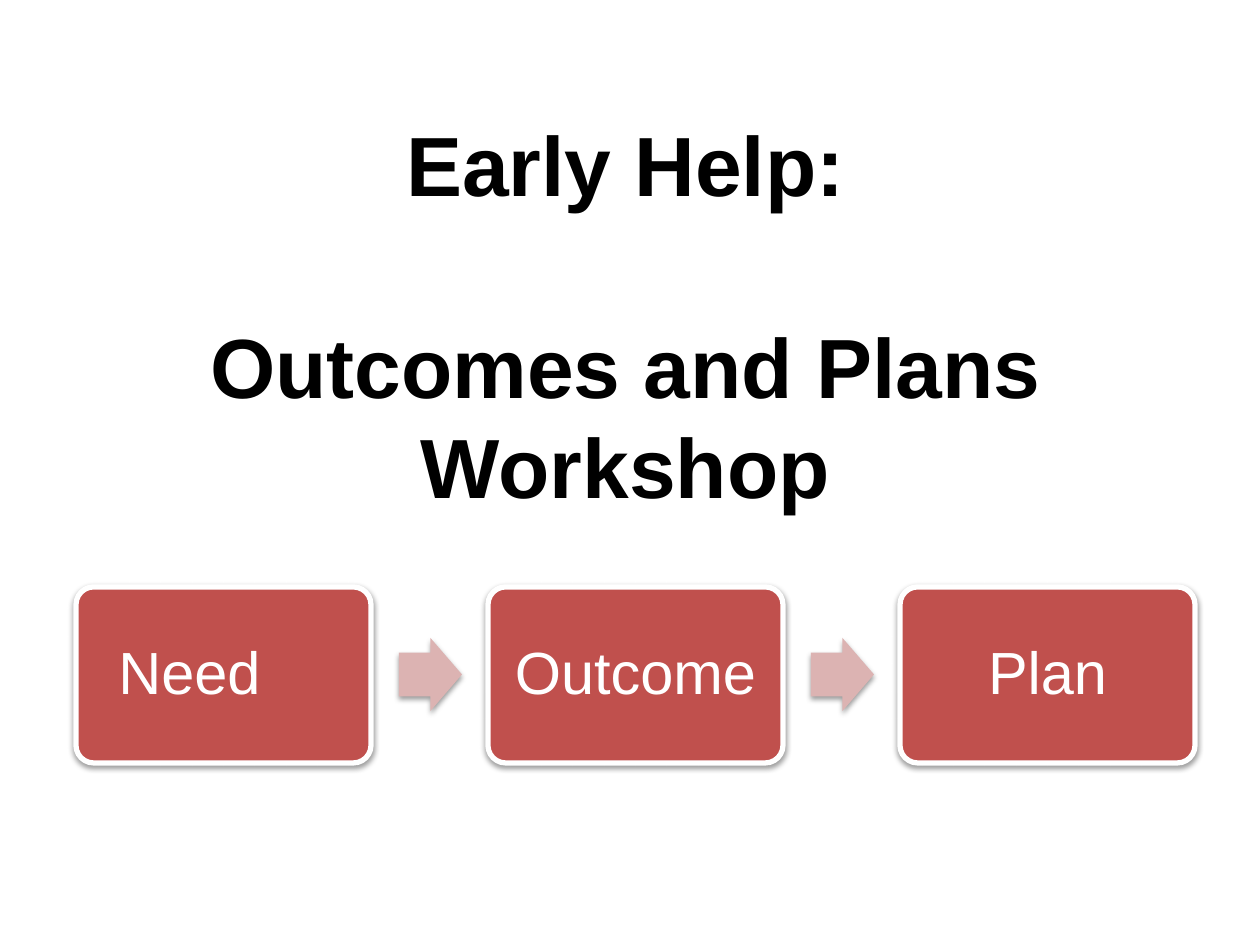
from dataclasses import dataclass
from typing import Optional, Union

import lxml.etree
import pptx
import pptx.dml.color
import pptx.enum.shapes
import pptx.enum.text
import pptx.oxml.ns
import pptx.shapes.autoshape
import pptx.slide
import pptx.text.text
import pptx.util

PX_PER_INCH = 126
EMU_PER_PX = 914400 / PX_PER_INCH
FONT = "Arial"
BLACK = pptx.dml.color.RGBColor(0x00, 0x00, 0x00)
WHITE = pptx.dml.color.RGBColor(0xFF, 0xFF, 0xFF)
RED = pptx.dml.color.RGBColor(0xC0, 0x50, 0x4D)
PINK = pptx.dml.color.RGBColor(0xDC, 0xB3, 0xB2)

STAGE_LEFT, STAGE_TOP, STAGE_WIDTH, STAGE_HEIGHT = 76, 587, 295, 176
STAGE_PITCH = 412
ARROW_OFFSET, ARROW_WIDTH, ARROW_HEIGHT = 323, 63, 73
STAGE_INSET = 18
TITLE_LINE_PT = 57.6


@dataclass(frozen=True)
class Stage:
    label: str
    right_inset: int = STAGE_INSET


STAGES = [Stage("Need", right_inset=86), Stage("Outcome"), Stage("Plan")]


def px(length: int) -> pptx.util.Emu:
    return pptx.util.Emu(round(length * EMU_PER_PX))


def write(frame: pptx.text.text.TextFrame, lines: list[str], *, size: int,
          color: pptx.dml.color.RGBColor, bold: bool = False,
          spacing: Union[float, pptx.util.Length] = 1.0,
          gap: Optional[pptx.util.Length] = None,
          anchor: pptx.enum.text.MSO_ANCHOR = pptx.enum.text.MSO_ANCHOR.MIDDLE) -> None:
    frame.word_wrap = True
    frame.vertical_anchor = anchor
    for index, line in enumerate(lines):
        paragraph = frame.add_paragraph() if index else frame.paragraphs[0]
        paragraph.alignment = pptx.enum.text.PP_ALIGN.CENTER
        paragraph.line_spacing = spacing
        if index and gap is not None:
            paragraph.space_before = gap
        run = paragraph.add_run()
        run.text = line
        run.font.name = FONT
        run.font.size = pptx.util.Pt(size)
        run.font.bold = bold
        run.font.color.rgb = color


def add_shadow(shape: pptx.shapes.autoshape.Shape) -> None:
    shape.shadow.inherit = False
    effects = shape.element.spPr.find(pptx.oxml.ns.qn("a:effectLst"))
    shadow = lxml.etree.SubElement(
        effects, pptx.oxml.ns.qn("a:outerShdw"),
        blurRad=str(pptx.util.Pt(3.1)), dist=str(pptx.util.Pt(1.6)),
        dir="5400000", rotWithShape="0")
    black = lxml.etree.SubElement(shadow, pptx.oxml.ns.qn("a:srgbClr"), val="000000")
    lxml.etree.SubElement(black, pptx.oxml.ns.qn("a:alpha"), val="38000")


def draw_stage(slide: pptx.slide.Slide, stage: Stage, left: int) -> None:
    box = slide.shapes.add_shape(
        pptx.enum.shapes.MSO_SHAPE.ROUNDED_RECTANGLE,
        px(left), px(STAGE_TOP), px(STAGE_WIDTH), px(STAGE_HEIGHT))
    box.adjustments[0] = 0.1
    box.fill.solid()
    box.fill.fore_color.rgb = RED
    box.line.color.rgb = WHITE
    box.line.width = pptx.util.Pt(3)
    add_shadow(box)
    frame = box.text_frame
    frame.margin_left = frame.margin_top = frame.margin_bottom = px(STAGE_INSET)
    frame.margin_right = px(stage.right_inset)
    write(frame, [stage.label], size=34, color=WHITE, spacing=0.9)


def draw_arrow(slide: pptx.slide.Slide, left: int) -> None:
    top = STAGE_TOP + (STAGE_HEIGHT - ARROW_HEIGHT) // 2
    arrow = slide.shapes.add_shape(
        pptx.enum.shapes.MSO_SHAPE.RIGHT_ARROW,
        px(left), px(top), px(ARROW_WIDTH), px(ARROW_HEIGHT))
    arrow.adjustments[0] = 0.6
    arrow.adjustments[1] = 0.5
    arrow.fill.solid()
    arrow.fill.fore_color.rgb = PINK
    arrow.line.fill.background()
    add_shadow(arrow)


def draw_title(slide: pptx.slide.Slide) -> None:
    title = slide.shapes.add_textbox(px(93), px(102), px(1065), px(420))
    line_height = pptx.util.Pt(TITLE_LINE_PT)
    write(title.text_frame, ["Early Help:", "Outcomes and Plans Workshop"],
          size=48, color=BLACK, bold=True, spacing=line_height, gap=line_height,
          anchor=pptx.enum.text.MSO_ANCHOR.BOTTOM)


def main() -> None:
    presentation = pptx.Presentation()
    presentation.slide_width = px(1260)
    presentation.slide_height = px(945)
    slide = presentation.slides.add_slide(presentation.slide_layouts[6])
    for index, stage in enumerate(STAGES):
        left = STAGE_LEFT + index * STAGE_PITCH
        draw_stage(slide, stage, left)
        if index < len(STAGES) - 1:
            draw_arrow(slide, left + ARROW_OFFSET)
    draw_title(slide)
    presentation.save("out.pptx")


if __name__ == "__main__":
    main()
